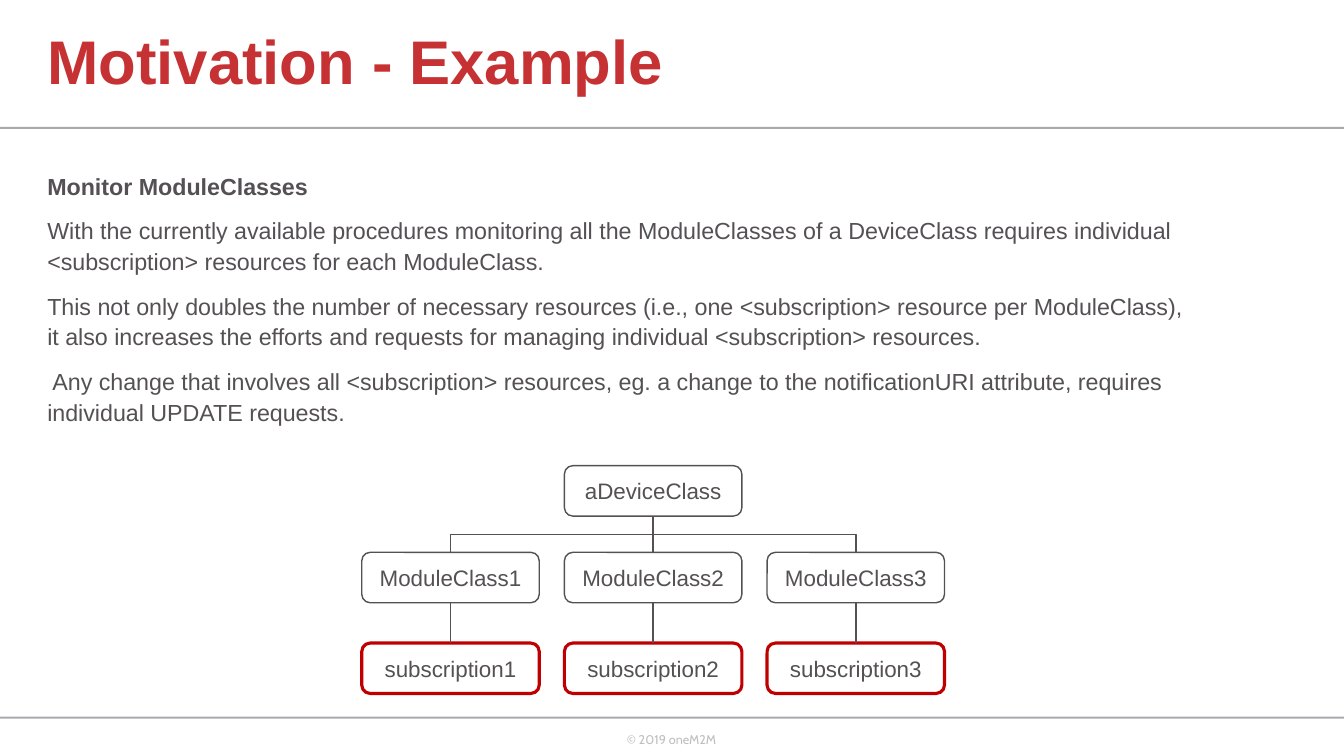
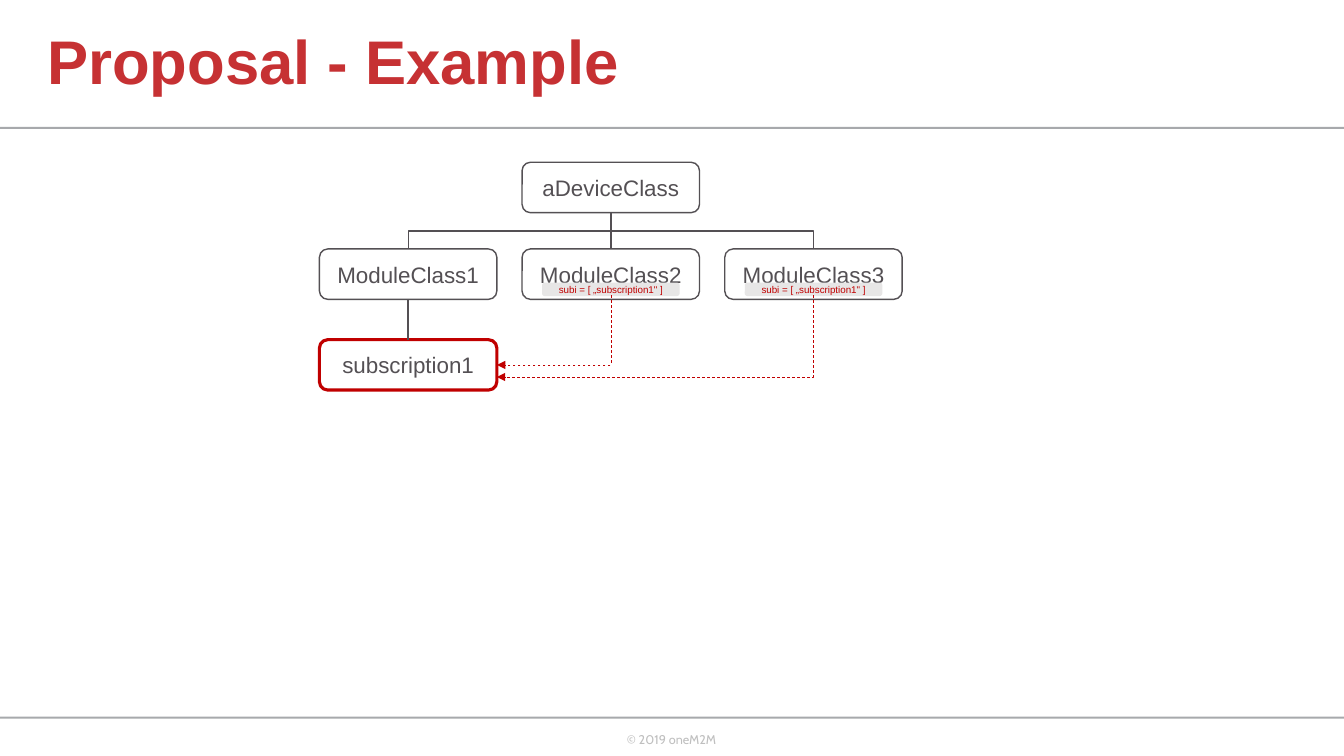
from dataclasses import dataclass

from lxml.etree import SubElement
from pptx import Presentation
from pptx.dml.color import RGBColor
from pptx.enum.dml import MSO_LINE
from pptx.enum.shapes import MSO_CONNECTOR, MSO_SHAPE
from pptx.enum.text import MSO_ANCHOR, PP_ALIGN
from pptx.oxml.ns import qn
from pptx.util import Inches, Pt

SLIDE_WIDTH, SLIDE_HEIGHT = 13.33, 7.5


@dataclass(frozen=True)
class Theme:
    title: str = "C63133"
    ink: str = "545054"
    accent: str = "C00000"
    rule: str = "A7A9AC"
    footer: str = "BFBFBF"
    tag: str = "E7E6E6"
    paper: str = "FFFFFF"
    font: str = "Arial"
    footer_font: str = "Cabin"
    title_size: float = 44
    body_size: float = 16.6
    node_size: float = 16
    footer_size: float = 9
    tag_size: float = 7


THEME = Theme()
TITLE = {"name": THEME.font, "size": THEME.title_size, "color": THEME.title, "bold": True}
BODY = {"name": THEME.font, "size": THEME.body_size, "color": THEME.ink, "bold": False}
HEADING = BODY | {"bold": True}
FOOTER = {"name": THEME.footer_font, "size": THEME.footer_size, "color": THEME.footer}
NODE = {"name": THEME.font, "size": THEME.node_size, "color": THEME.ink}
TAG = {"name": THEME.font, "size": THEME.tag_size, "color": THEME.accent}

PLAIN_LINE = {"color": THEME.ink, "width": 1}
ALERT_LINE = {"color": THEME.accent, "width": 2.25}
TAG_LINE = {"color": THEME.tag, "width": 1}
LINK_LINE = {"color": THEME.accent, "width": 0.5, "dash_style": MSO_LINE.DASH}

# Tree grid, in inches
COLUMN_PITCH = 2.01
ROW_TOPS = (0, 0.86, 1.76)
DEVICE_ROW, MODULE_ROW, SUBSCRIPTION_ROW = range(3)
NODE_WIDTH, NODE_HEIGHT = 1.76, 0.5
TAG_WIDTH, TAG_HEIGHT, TAG_DROP = 1.35, 0.12, 0.34

MOTIVATION = (
    ("Monitor ModuleClasses", HEADING),
    ("With the currently available procedures monitoring all the ModuleClasses of a "
     "DeviceClass requires individual <subscription> resources for each ModuleClass.", BODY),
    ("This not only doubles the number of necessary resources (i.e., one <subscription> "
     "resource per ModuleClass), it also increases the efforts and requests for managing "
     "individual <subscription> resources.", BODY),
    (" Any change that involves all <subscription> resources, eg. a change to the "
     "notificationURI attribute, requires individual UPDATE requests.", BODY),
)


def share(left, top, width=0, height=0):
    """Turn percentages of the slide's size into inches."""
    return (left * SLIDE_WIDTH / 100, top * SLIDE_HEIGHT / 100,
            width * SLIDE_WIDTH / 100, height * SLIDE_HEIGHT / 100)


def apply(target, values):
    """Set attributes of a font or a line; colours are hex, sizes are points."""
    for name, value in values.items():
        if name == "color":
            target.color.rgb = RGBColor.from_string(value)
        else:
            setattr(target, name, Pt(value) if name in ("size", "width") else value)


def write(paragraph, text, font, **layout):
    paragraph.text = text
    apply(paragraph.font, font)
    for name, value in layout.items():
        setattr(paragraph, name, value)


def add_text(slide, box, paragraphs, line_spacing=1.0, space_before=0, **frame_format):
    frame = slide.shapes.add_textbox(*map(Inches, box)).text_frame
    for name, value in ({"word_wrap": True} | frame_format).items():
        setattr(frame, name, value)
    for index, (text, font) in enumerate(paragraphs):
        paragraph = frame.add_paragraph() if index else frame.paragraphs[0]
        write(paragraph, text, font, line_spacing=line_spacing,
              space_before=Pt(space_before if index else 0))


def add_block(slide, kind, box, fill, line=None):
    shape = slide.shapes.add_shape(kind, *map(Inches, box))
    shape.shadow.inherit = False
    shape.fill.solid()
    shape.fill.fore_color.rgb = RGBColor.from_string(fill)
    if line:
        apply(shape.line, line)
    else:
        shape.line.fill.background()
    return shape


def add_label(slide, box, text, font, fill, line):
    """Draw a rounded box with centred text."""
    shape = add_block(slide, MSO_SHAPE.ROUNDED_RECTANGLE, box, fill, line)
    frame = shape.text_frame
    frame.vertical_anchor = MSO_ANCHOR.MIDDLE
    frame.word_wrap = True
    for side in ("left", "top", "right", "bottom"):
        setattr(frame, f"margin_{side}", 0)
    write(frame.paragraphs[0], text, font, alignment=PP_ALIGN.CENTER)


def add_line(slide, kind, start, end, line):
    connector = slide.shapes.add_connector(kind, *map(Inches, (*start, *end)))
    apply(connector.line, line)
    properties = connector.element.spPr
    SubElement(properties, qn("a:effectLst"))
    return properties


def add_elbow(slide, start, end, line):
    """Draw an elbow that leaves its start downwards: a quarter turn of a sideways one."""
    middle_x, middle_y = (start[0] + end[0]) / 2, (start[1] + end[1]) / 2
    half_run, half_drop = (start[0] - end[0]) / 2, (end[1] - start[1]) / 2
    properties = add_line(slide, MSO_CONNECTOR.ELBOW,
                          (middle_x - half_drop, middle_y - half_run),
                          (middle_x + half_drop, middle_y + half_run), line)
    properties.find(qn("a:xfrm")).set("rot", str(90 * 60000))
    return properties


def add_link(slide, start, end):
    """Draw a dashed arrow with a single bend."""
    properties = add_elbow(slide, start, end, LINK_LINE)
    properties.find(qn("a:prstGeom")).set("prst", "bentConnector2")
    SubElement(properties.find(qn("a:ln")), qn("a:tailEnd"), type="triangle")


@dataclass(frozen=True)
class Tree:
    """A device class with three modules, placed on the tree grid."""
    slide: object
    left: float
    top: float

    def point(self, column, row, across=0.5, down=0.0):
        """Locate a point by its share of a node's width and height."""
        return (self.left + column * COLUMN_PITCH + across * NODE_WIDTH,
                self.top + ROW_TOPS[row] + down * NODE_HEIGHT)

    def add_node(self, column, row, text, line=PLAIN_LINE):
        box = (*self.point(column, row, across=0), NODE_WIDTH, NODE_HEIGHT)
        add_label(self.slide, box, text, NODE, THEME.paper, line)

    def add_modules(self):
        self.add_node(1, DEVICE_ROW, "aDeviceClass")
        for column in range(3):
            self.add_node(column, MODULE_ROW, f"ModuleClass{column + 1}")
            add_elbow(self.slide, self.point(1, DEVICE_ROW, down=1),
                      self.point(column, MODULE_ROW), PLAIN_LINE)

    def add_subscription(self, column):
        self.add_node(column, SUBSCRIPTION_ROW, f"subscription{column + 1}", ALERT_LINE)
        add_line(self.slide, MSO_CONNECTOR.STRAIGHT, self.point(column, SUBSCRIPTION_ROW),
                 self.point(column, MODULE_ROW, down=1), PLAIN_LINE)

    def add_reference(self, column, down):
        """Tag a module and link the tag to the first subscription."""
        center, top = self.point(column, MODULE_ROW)
        top += TAG_DROP
        add_label(self.slide, (center - TAG_WIDTH / 2, top, TAG_WIDTH, TAG_HEIGHT),
                  'subi = [ „subscription1" ]', TAG, THEME.tag, TAG_LINE)
        add_link(self.slide, (center, top + TAG_HEIGHT),
                 self.point(0, SUBSCRIPTION_ROW, across=1, down=down))


def add_slide(presentation, title):
    """Add a slide with the shared rules, footer and title."""
    slide = presentation.slides.add_slide(presentation.slide_layouts[6])
    for top in (16.8, 94.8):
        add_block(slide, MSO_SHAPE.RECTANGLE, share(0, top, 100, 0.27), THEME.rule)
    add_text(slide, share(45.9, 96.13, 8.25, 5.33), [("© 2019 oneM2M", FOOTER)],
             word_wrap=False)
    add_text(slide, share(2.78, 0, 64.42, 17.07), [(title, TITLE)], line_spacing=0.9,
             vertical_anchor=MSO_ANCHOR.MIDDLE)
    return slide


def add_motivation(presentation):
    slide = add_slide(presentation, "Motivation - Example")
    add_text(slide, share(2.78, 21.73, 86.25, 37.87), MOTIVATION,
             line_spacing=1.1, space_before=10)
    tree = Tree(slide, *share(26.92, 61.6)[:2])
    tree.add_modules()
    for column in range(3):
        tree.add_subscription(column)


def add_proposal(presentation):
    slide = add_slide(presentation, "Proposal - Example")
    tree = Tree(slide, *share(23.77, 21.47)[:2])
    tree.add_modules()
    tree.add_subscription(0)
    for column, down in ((1, 0.5), (2, 0.74)):
        tree.add_reference(column, down)


def main():
    presentation = Presentation()
    presentation.slide_width = Inches(SLIDE_WIDTH)
    presentation.slide_height = Inches(SLIDE_HEIGHT)
    add_motivation(presentation)
    add_proposal(presentation)
    presentation.save("out.pptx")


if __name__ == "__main__":
    main()
